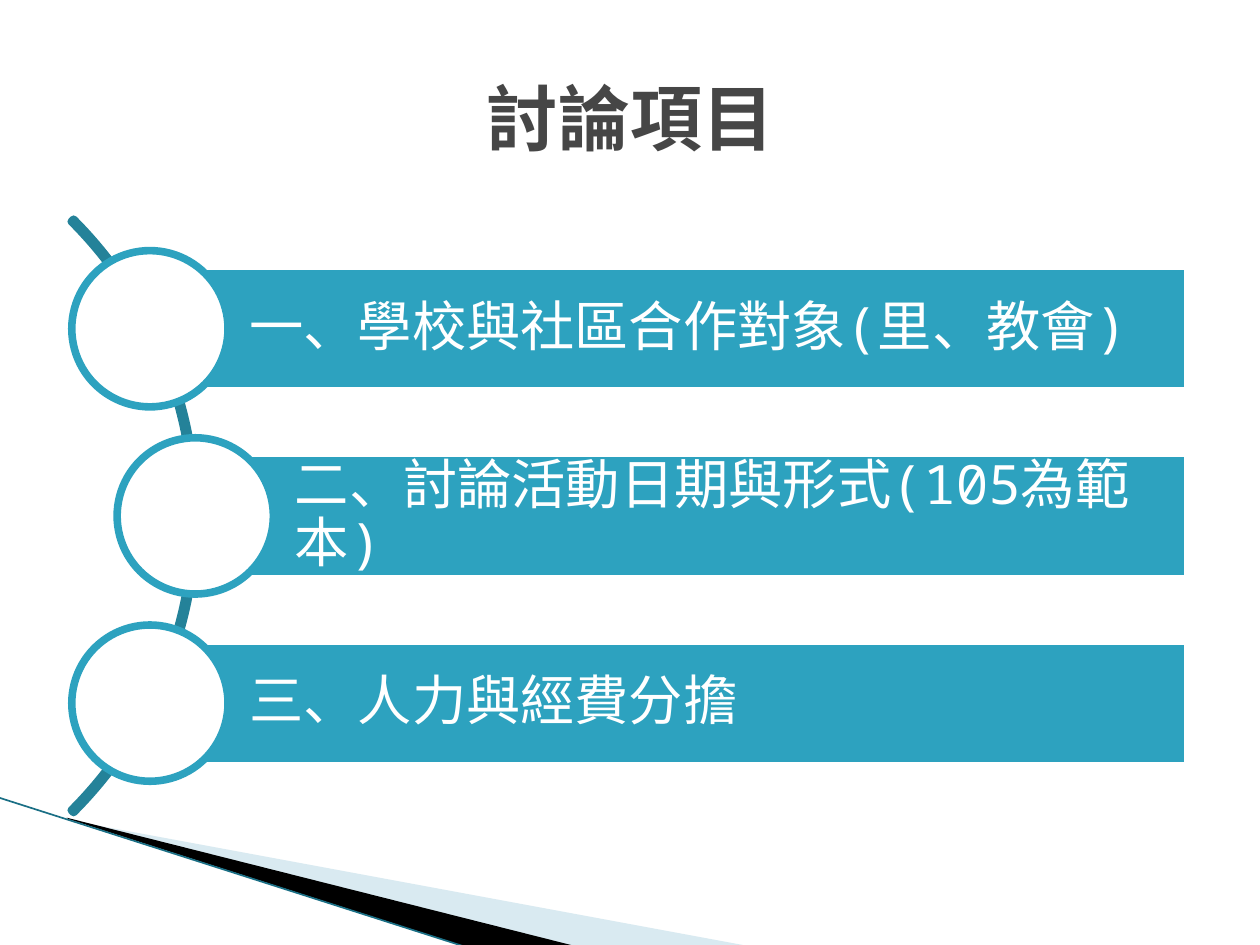
from lxml import etree
from pptx import Presentation
from pptx.dml.color import RGBColor
from pptx.enum.shapes import MSO_CONNECTOR as CONN, MSO_SHAPE as SHAPE
from pptx.enum.text import MSO_ANCHOR as ANCHOR, PP_ALIGN as ALIGN
from pptx.oxml.ns import qn
from pptx.util import Inches, Pt

FONT = "Noto Sans Mono"
COLORS = {
    "teal": "2DA2BF", "arc": "248299", "edge": "1A6F85", "pale": "A0CBDC",
    "black": "000000", "white": "FFFFFF", "title": "464646",
}
ITEMS = ["一、學校與社區合作對象(里、教會)", "二、討論活動日期與形式(105為範本)", "三、人力與經費分擔"]


def rgb(name):
    """Return the named palette colour."""
    return RGBColor.from_string(COLORS[name])


def paint(sp, fill=None, line=None, width=4.33):
    """Set fill and outline and remove the shadow."""
    sp.shadow.inherit = False
    if fill:
        sp.fill.solid()
        sp.fill.fore_color.rgb = rgb(fill)
    else:
        sp.fill.background()
    if line:
        sp.line.color.rgb = rgb(line)
        sp.line.width = Pt(width)
    else:
        sp.line.fill.background()


def add_preset(s, kind, x, y, w, h, **look):
    """Add a painted preset shape, placed in inches."""
    sp = s.shapes.add_shape(kind, Inches(x), Inches(y), Inches(w), Inches(h))
    paint(sp, **look)
    return sp


def write(sp, text, size, color, bold=False, align=ALIGN.LEFT, spacing=None, left=0.1):
    """Write one formatted paragraph, centred vertically."""
    tf = sp.text_frame
    tf.word_wrap = True
    tf.vertical_anchor = ANCHOR.MIDDLE
    tf.margin_left = Inches(left)
    tf.margin_right = tf.margin_top = tf.margin_bottom = Inches(0.09)
    p = tf.paragraphs[0]
    p.alignment = align
    p.line_spacing = spacing
    r = p.add_run()
    r.text = text
    r.font.name, r.font.size, r.font.bold = FONT, Pt(size), bold
    r.font.color.rgb = rgb(color)


def add_wedge(s, x, y, points, fill, alpha=None):
    """Add a filled outline from points relative to x, y."""
    pts = [(Inches(x + dx), Inches(y + dy)) for dx, dy in points]
    fb = s.shapes.build_freeform(*pts[0], scale=1.0)
    fb.add_line_segments(pts[1:], close=True)
    sp = fb.convert_to_shape()
    paint(sp, fill)
    if alpha:
        clr = sp._element.spPr.find(qn("a:solidFill"))[0]
        etree.SubElement(clr, qn("a:alpha")).set("val", str(alpha * 1000))


def add_corner(s, x, y):
    """Draw the wedges and the thin edge in the lower left corner."""
    add_wedge(s, x, y, [(0.55, 0.18), (5.95, 1.18), (4.56, 1.18), (0.55, 0.17)], "pale", 40)
    add_wedge(s, x, y, [(0.53, 0.16), (4.57, 1.18), (3.72, 1.19), (0.54, 0.17)], "black")
    cn = s.shapes.add_connector(CONN.STRAIGHT, Inches(x - 0.01), Inches(y),
                                Inches(x + 3.71), Inches(y + 1.19))
    cn.line.color.rgb = rgb("edge")
    cn.line.width = Pt(0.95)
    etree.SubElement(cn._element.spPr, qn("a:effectLst"))


def add_title(s, x, y, w, h, text):
    """Add the centred heading."""
    sp = s.shapes.add_textbox(Inches(x), Inches(y), Inches(w), Inches(h))
    write(sp, text, 41, "title", bold=True, align=ALIGN.CENTER)


def add_curved_list(s, x, y, w, h, items):
    """Draw the arc with one bar and one circle for each item."""
    disc, bar, bulge, arc = 1.24, 0.99, 0.36, 6.66
    pitch = h / (len(items) + 0.17)
    sp = add_preset(s, SHAPE.BLOCK_ARC, x - 5.67, y + h / 2 - arc / 2, arc, arc, line="arc")
    for i, value in enumerate((189, 27, 0.004)):
        sp.adjustments[i] = value
    for i, text in enumerate(items):
        left = x + (bulge if 0 < i < len(items) - 1 else 0)
        mid = y + h / 2 + (i - (len(items) - 1) / 2) * pitch
        start = left + disc / 2
        sp = add_preset(s, SHAPE.RECTANGLE, start, mid - bar / 2, x + w - start, bar,
                        fill="teal", line="white")
        write(sp, text, 31, "white", spacing=0.9, left=0.79)
        add_preset(s, SHAPE.OVAL, left, mid - disc / 2, disc, disc, fill="white", line="teal")


def main():
    """Build and save the slide."""
    prs = Presentation()
    prs.slide_width, prs.slide_height = Inches(10), Inches(7.5)
    s = prs.slides.add_slide(prs.slide_layouts[6])
    add_corner(s, 0, 6.33)
    add_curved_list(s, 0.57, 1.74, 8.86, 4.71, ITEMS)
    add_title(s, 0.5, 0.3, 9, 1.25, "討論項目")
    prs.save("out.pptx")


if __name__ == "__main__":
    main()
